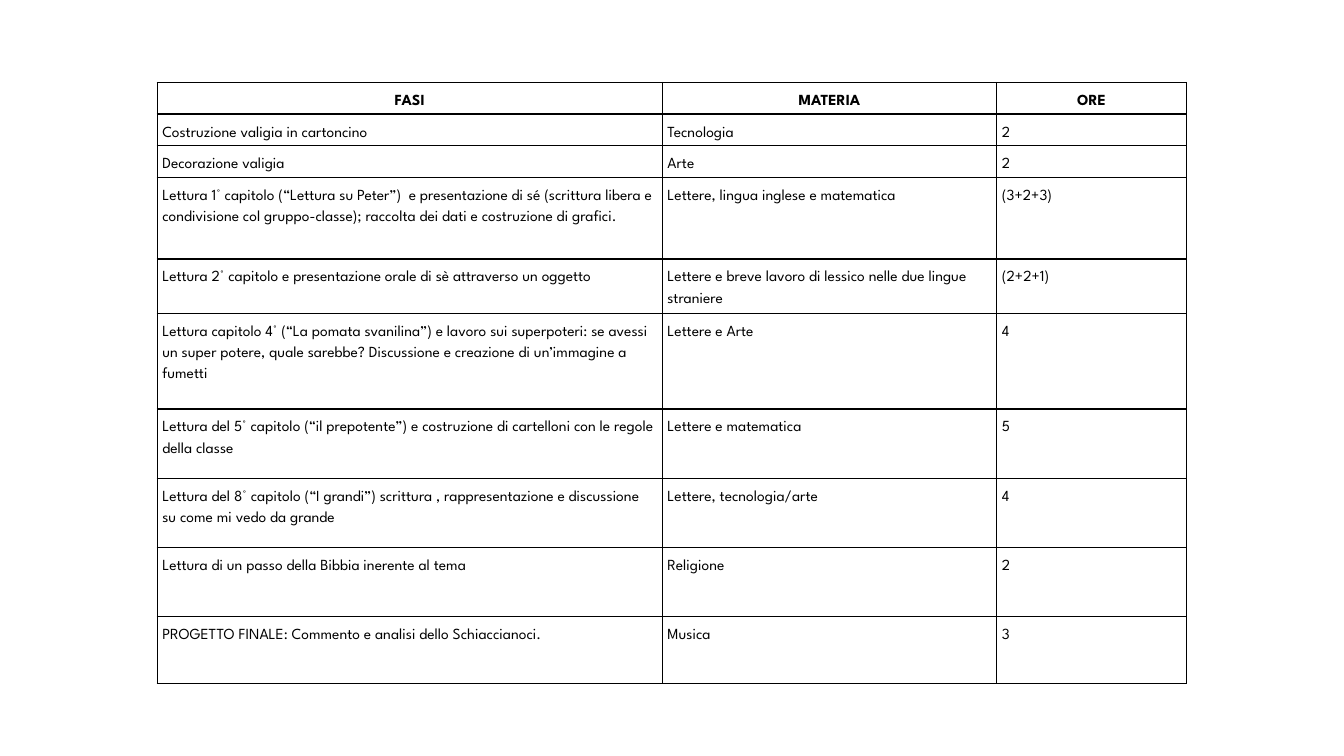
from lxml.etree import SubElement
from pptx import Presentation
from pptx.dml.color import RGBColor
from pptx.enum.text import MSO_ANCHOR, PP_ALIGN
from pptx.oxml.ns import qn
from pptx.util import Cm, Pt

COLORS = {"ink": "000000", "page": "FFFFFF"}
PAD = Cm(0.13)
CELL = {
    "margin_left": PAD, "margin_right": PAD,
    "margin_top": PAD, "margin_bottom": PAD,
    "vertical_anchor": MSO_ANCHOR.TOP,
}
FONT = {"name": "League Spartan", "size": Pt(11)}
PLAIN = {"first_row": False, "horz_banding": False}

# Column widths and table box, in cm
WIDTHS = (12.73, 8.43, 4.78)
BOX = (3.96, 2.08)

# Row height in cm, then phase, subject and hours
ROWS = [
    (0.66, "FASI", "MATERIA", "ORE"),
    (0.66, "Costruzione valigia in cartoncino", "Tecnologia", "2"),
    (0.66, "Decorazione valigia", "Arte", "2"),
    (2.06, "Lettura 1° capitolo (“Lettura su Peter”)  e presentazione di sé "
           "(scrittura libera e condivisione col gruppo-classe); raccolta dei "
           "dati e costruzione di grafici.",
     "Lettere, lingua inglese e matematica", "(3+2+3)"),
    (1.37, "Lettura 2° capitolo e presentazione orale di sè attraverso un oggetto",
     "Lettere e breve lavoro di lessico nelle due lingue straniere", "(2+2+1)"),
    (2.41, "Lettura capitolo 4° (“La pomata svanilina”) e lavoro sui "
           "superpoteri: se avessi un super potere, quale sarebbe? Discussione "
           "e creazione di un’immagine a fumetti",
     "Lettere e Arte", "4"),
    (1.75, "Lettura del 5° capitolo (“il prepotente”) e costruzione di "
           "cartelloni con le regole della classe",
     "Lettere e matematica", "5"),
    (1.75, "Lettura del 8° capitolo (“I grandi”) scrittura , rappresentazione "
           "e discussione su come mi vedo da grande",
     "Lettere, tecnologia/arte", "4"),
    (1.73, "Lettura di un passo della Bibbia inerente al tema", "Religione", "2"),
    (1.68, "PROGETTO FINALE: Commento e analisi dello Schiaccianoci.",
     "Musica", "3"),
]


def apply(item, values):
    for key, value in values.items():
        setattr(item, key, value)


def border(cell):
    props = cell._tc.get_or_add_tcPr()
    for side in ("lnL", "lnR", "lnT", "lnB"):
        line = SubElement(props, qn(f"a:{side}"), w=str(Pt(1)))
        fill = SubElement(line, qn("a:solidFill"))
        SubElement(fill, qn("a:srgbClr"), val=COLORS["ink"])


def write(cell, text, head):
    apply(cell, CELL)
    border(cell)
    cell.fill.background()
    cell.text = text
    para = cell.text_frame.paragraphs[0]
    para.line_spacing = 1.5
    para.alignment = PP_ALIGN.CENTER if head else PP_ALIGN.LEFT
    font = para.runs[0].font
    apply(font, FONT | {"bold": head})
    font.color.rgb = RGBColor.from_string(COLORS["ink"])


def plan(slide, left, top):
    """Place the table of phases, subjects and hours."""
    high = sum(row[0] for row in ROWS)
    frame = slide.shapes.add_table(
        len(ROWS), len(WIDTHS), Cm(left), Cm(top), Cm(sum(WIDTHS)), Cm(high))
    table = frame.table
    apply(table, PLAIN)
    for col, width in zip(table.columns, WIDTHS):
        col.width = Cm(width)
    for r, (height, *texts) in enumerate(ROWS):
        table.rows[r].height = Cm(height)
        for c, text in enumerate(texts):
            write(table.cell(r, c), text, r == 0)


def main():
    deck = Presentation()
    apply(deck, {"slide_width": Cm(33.87), "slide_height": Cm(19.05)})
    slide = deck.slides.add_slide(deck.slide_layouts[6])
    # Page colour
    fill = slide.background.fill
    fill.solid()
    fill.fore_color.rgb = RGBColor.from_string(COLORS["page"])
    # Table
    plan(slide, *BOX)
    deck.save("out.pptx")


if __name__ == "__main__":
    main()
